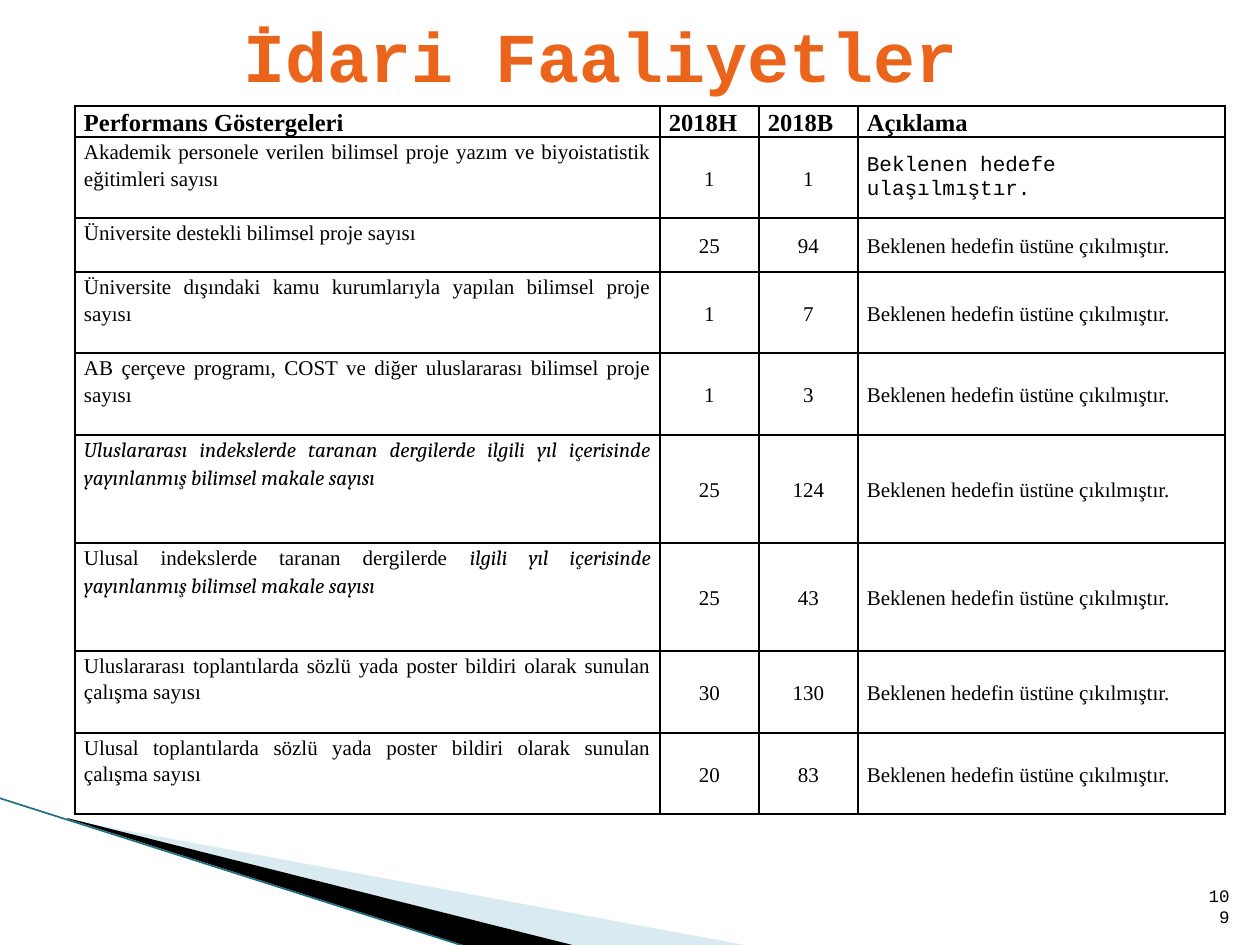
from dataclasses import dataclass

from lxml import etree
from pptx import Presentation
from pptx.dml.color import RGBColor
from pptx.enum.shapes import MSO_CONNECTOR
from pptx.enum.text import MSO_ANCHOR, MSO_AUTO_SIZE, PP_ALIGN
from pptx.oxml.ns import qn
from pptx.util import Pt

LEFT, CENTER, RIGHT, JUSTIFY = PP_ALIGN.LEFT, PP_ALIGN.CENTER, PP_ALIGN.RIGHT, PP_ALIGN.JUSTIFY
TOP, MIDDLE, BOTTOM = MSO_ANCHOR.TOP, MSO_ANCHOR.MIDDLE, MSO_ANCHOR.BOTTOM
STRAIGHT = MSO_CONNECTOR.STRAIGHT
EMU_PER_PX = 914400 / 126


@dataclass(frozen=True)
class Theme:
    title_color: str = "EB641B"
    ink: str = "000000"
    light_wedge: str = "A0CBDC"
    edge: str = "1F6F84"
    mono: str = "Courier New"
    serif: str = "Times New Roman"
    accent: str = "Cambria"
    title_size: int = 40
    header_size: int = 14
    body_size: int = 12
    number_size: int = 10
    line_spacing: float = 1.15


THEME = Theme()
TITLE = "İdari Faaliyetler "
SLIDE_NUMBER = "109"
HEADER = ("Performans Göstergeleri", "2018H", "2018B", "Açıklama")
REACHED = "Beklenen hedefe ulaşılmıştır."
EXCEEDED = "Beklenen hedefin üstüne çıkılmıştır."
ROWS = [
    ("Akademik personele verilen bilimsel proje yazım ve biyoistatistik eğitimleri sayısı", "",
     "1", "1", REACHED),
    ("Üniversite destekli bilimsel proje sayısı", "", "25", "94", EXCEEDED),
    ("Üniversite dışındaki kamu kurumlarıyla yapılan bilimsel proje sayısı", "",
     "1", "7", EXCEEDED),
    ("AB çerçeve programı, COST ve diğer uluslararası bilimsel proje sayısı", "",
     "1", "3", EXCEEDED),
    ("", "Uluslararası indekslerde taranan dergilerde ilgili yıl içerisinde "
     "yayınlanmış bilimsel makale sayısı", "25", "124", EXCEEDED),
    ("Ulusal indekslerde taranan dergilerde ",
     "ilgili yıl içerisinde yayınlanmış bilimsel makale sayısı", "25", "43", EXCEEDED),
    ("Uluslararası toplantılarda sözlü yada poster bildiri olarak sunulan çalışma sayısı", "",
     "30", "130", EXCEEDED),
    ("Ulusal toplantılarda sözlü yada poster bildiri olarak sunulan çalışma sayısı", "",
     "20", "83", EXCEEDED),
]
TABLE_LEFT, TABLE_TOP = 75, 106
COLUMN_WIDTHS = (585, 99, 99, 367)
ROW_HEIGHTS = (31, 81, 54, 81, 82, 108, 108, 82, 81)
CELL_MARGIN = 9
WEDGES = [
    ([(69, 820), (750, 946), (575, 946), (69, 819)], THEME.light_wedge, 40),
    ([(67, 818), (576, 946), (469, 947), (68, 819)], THEME.ink, 100),
]
EDGE_LINE = (-1, 798, 467, 947)


def px(value):
    return round(value * EMU_PER_PX)


def style_run(run, font, size, color=THEME.ink, bold=False, italic=False):
    run.font.name = font
    run.font.size = Pt(size)
    run.font.bold = bold
    run.font.italic = italic
    run.font.color.rgb = RGBColor.from_string(color)


def add_wedge(slide, points, color, opacity):
    builder = slide.shapes.build_freeform(*points[0], scale=EMU_PER_PX)
    builder.add_line_segments(points[1:], close=True)
    shape = builder.convert_to_shape()
    shape.shadow.inherit = False
    shape.fill.solid()
    shape.fill.fore_color.rgb = RGBColor.from_string(color)
    shape.line.fill.background()
    if opacity < 100:
        color_element = shape.fill._xPr.find(".//" + qn("a:srgbClr"))
        etree.SubElement(color_element, qn("a:alpha"), val=str(opacity * 1000))


def add_edge_line(slide):
    line = slide.shapes.add_connector(STRAIGHT, *map(px, EDGE_LINE))
    line.line.color.rgb = RGBColor.from_string(THEME.edge)
    line.line.width = Pt(0.95)
    etree.SubElement(line._element.spPr, qn("a:effectLst"))


def add_borders(cell):
    properties = cell._tc.get_or_add_tcPr()
    for side in ("lnL", "lnR", "lnT", "lnB"):
        border = etree.SubElement(properties, qn(f"a:{side}"), w=str(Pt(1)))
        fill = etree.SubElement(border, qn("a:solidFill"))
        etree.SubElement(fill, qn("a:srgbClr"), val=THEME.ink)


def fill_cell(cell, runs, alignment, anchor, size, bold=False, spacing=THEME.line_spacing):
    cell.margin_left = cell.margin_right = px(CELL_MARGIN)
    cell.margin_top = cell.margin_bottom = 0
    cell.vertical_anchor = anchor
    add_borders(cell)
    cell.fill.background()
    paragraph = cell.text_frame.paragraphs[0]
    paragraph.alignment = alignment
    paragraph.line_spacing = spacing
    for text, font, italic in runs:
        run = paragraph.add_run()
        run.text = text
        style_run(run, font, size, bold=bold, italic=italic)


def add_indicator_table(slide):
    frame = slide.shapes.add_table(
        len(ROW_HEIGHTS), len(COLUMN_WIDTHS), px(TABLE_LEFT), px(TABLE_TOP),
        px(sum(COLUMN_WIDTHS)), px(sum(ROW_HEIGHTS)))
    table = frame.table
    table.first_row = table.horz_banding = False
    for column, width in zip(table.columns, COLUMN_WIDTHS):
        column.width = px(width)
    for row, height in zip(table.rows, ROW_HEIGHTS):
        row.height = px(height)
    for index, text in enumerate(HEADER):
        anchor = MIDDLE if index in (1, 2) else TOP
        fill_cell(table.cell(0, index), [(text, THEME.serif, False)], JUSTIFY, anchor,
                  THEME.header_size, bold=True)
    for index, (plain, emphasis, target, actual, note) in enumerate(ROWS, 1):
        indicator = [(plain, THEME.serif, False), (emphasis, THEME.accent, True)]
        fill_cell(table.cell(index, 0), [run for run in indicator if run[0]], JUSTIFY, TOP,
                  THEME.body_size)
        for column, value in ((1, target), (2, actual)):
            fill_cell(table.cell(index, column), [(value, THEME.serif, False)], CENTER, MIDDLE,
                      THEME.body_size)
        note_font, spacing = (
            (THEME.mono, 1.0) if note == REACHED else (THEME.serif, THEME.line_spacing))
        fill_cell(table.cell(index, 3), [(note, note_font, False)], LEFT, MIDDLE,
                  THEME.body_size, spacing=spacing)


def set_text(shape, text, alignment, anchor, size, color, bold=False):
    frame = shape.text_frame
    frame.text = text
    frame.word_wrap = True
    frame.auto_size = MSO_AUTO_SIZE.NONE
    frame.vertical_anchor = anchor
    paragraph = frame.paragraphs[0]
    paragraph.alignment = alignment
    style_run(paragraph.runs[0], THEME.mono, size, color, bold)


def main():
    presentation = Presentation()
    presentation.slide_width, presentation.slide_height = px(1260), px(945)
    slide = presentation.slides.add_slide(presentation.slide_layouts[5])
    for wedge in WEDGES:
        add_wedge(slide, *wedge)
    add_edge_line(slide)
    add_indicator_table(slide)
    number = slide.shapes.add_textbox(px(1192), px(883), px(50), px(50))
    set_text(number, SLIDE_NUMBER, RIGHT, BOTTOM, THEME.number_size, THEME.ink)
    title = slide.shapes.title
    title.left, title.top, title.width, title.height = map(px, (54, -24, 1134, 158))
    set_text(title, TITLE, CENTER, MIDDLE, THEME.title_size, THEME.title_color, bold=True)
    presentation.save("out.pptx")


if __name__ == "__main__":
    main()
